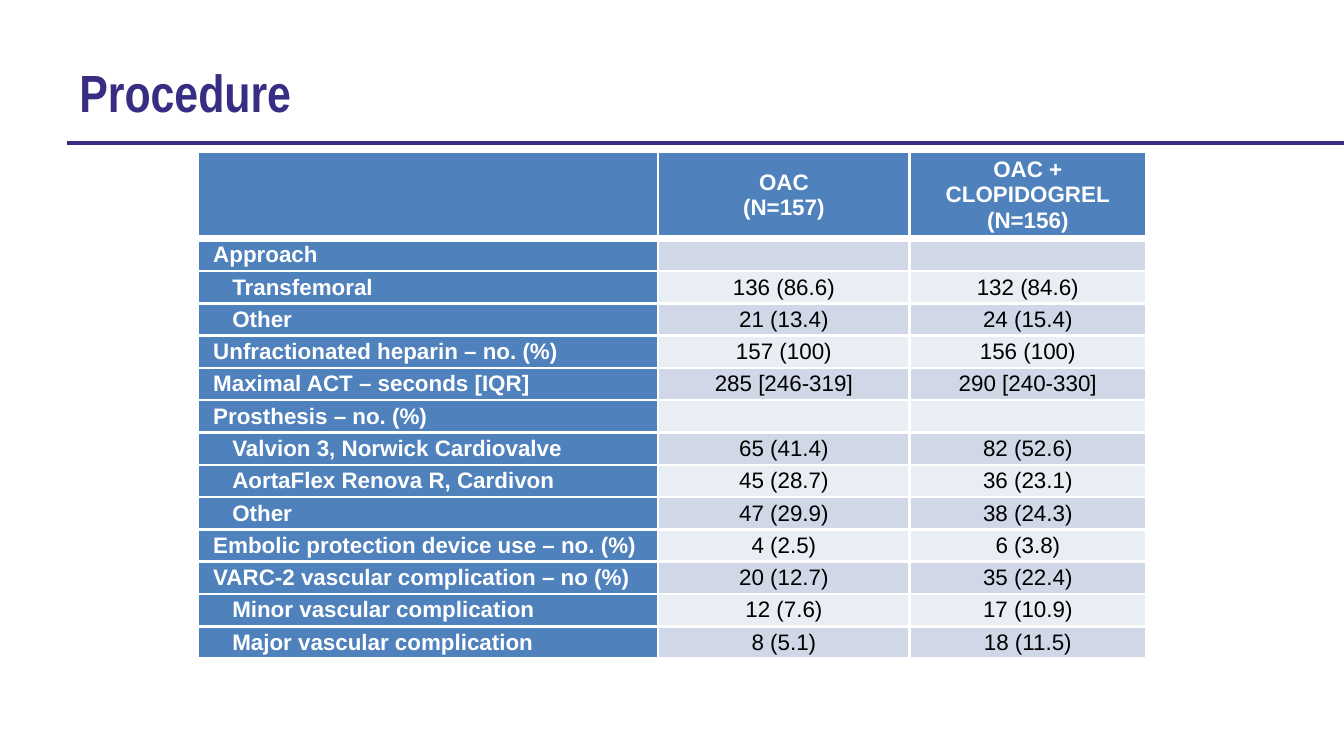
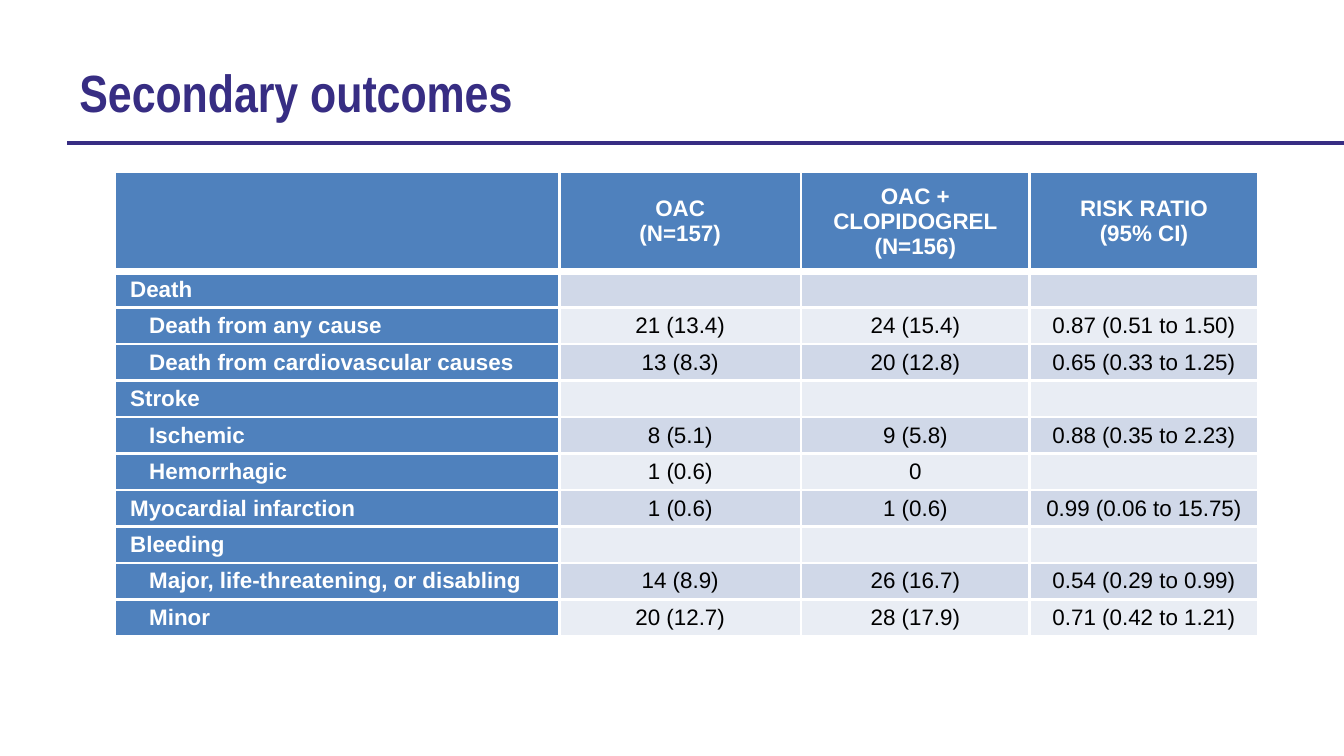
import pptx
import pptx.dml.color
import pptx.enum.shapes
import pptx.enum.text
import pptx.oxml.ns
import pptx.util
from itertools import zip_longest
from lxml import etree

Cm = pptx.util.Cm
Pt = pptx.util.Pt
qn = pptx.oxml.ns.qn
MIDDLE = pptx.enum.text.MSO_ANCHOR.MIDDLE
ALIGN = pptx.enum.text.PP_ALIGN

COLORS = {
    "title": "372D83",
    "header": "4F81BD",
    "dark_band": "D0D8E8",
    "light_band": "E9EDF4",
    "white": "FFFFFF",
    "black": "000000",
}
LABEL_INDENTS = (0.3, 0.66)
OAC = "OAC\v(N=157)"
OAC_CLOPIDOGREL = "OAC +\vCLOPIDOGREL\v(N=156)"

PROCEDURE_ROWS = [
    (0, "Approach"),
    (1, "Transfemoral", "136 (86.6)", "132 (84.6)"),
    (1, "Other", "21 (13.4)", "24 (15.4)"),
    (0, "Unfractionated heparin – no. (%)", "157 (100)", "156 (100)"),
    (0, "Maximal ACT – seconds [IQR]", "285 [246-319]", "290 [240-330]"),
    (0, "Prosthesis – no. (%)"),
    (1, "Valvion 3, Norwick Cardiovalve", "65 (41.4)", "82 (52.6)"),
    (1, "AortaFlex Renova R, Cardivon", "45 (28.7)", "36 (23.1)"),
    (1, "Other", "47 (29.9)", "38 (24.3)"),
    (0, "Embolic protection device use – no. (%)", "4 (2.5)", "6 (3.8)"),
    (0, "VARC-2 vascular complication – no (%)", "20 (12.7)", "35 (22.4)"),
    (1, "Minor vascular complication", "12 (7.6)", "17 (10.9)"),
    (1, "Major vascular complication", "8 (5.1)", "18 (11.5)"),
]

OUTCOME_ROWS = [
    (0, "Death"),
    (1, "Death from any cause", "21 (13.4)", "24 (15.4)", "0.87 (0.51 to 1.50)"),
    (1, "Death from cardiovascular causes", "13 (8.3)", "20 (12.8)", "0.65 (0.33 to 1.25)"),
    (0, "Stroke"),
    (1, "Ischemic", "8 (5.1)", "9 (5.8)", "0.88 (0.35 to 2.23)"),
    (1, "Hemorrhagic", "1 (0.6)", "0"),
    (0, "Myocardial infarction", "1 (0.6)", "1 (0.6)", "0.99 (0.06 to 15.75)"),
    (0, "Bleeding"),
    (1, "Major, life-threatening, or disabling", "14 (8.9)", "26 (16.7)", "0.54 (0.29 to 0.99)"),
    (1, "Minor", "20 (12.7)", "28 (17.9)", "0.71 (0.42 to 1.21)"),
]


def rgb(name):
    return pptx.dml.color.RGBColor.from_string(COLORS[name])


class TrialDeck:
    def __init__(self):
        self.deck = pptx.Presentation()
        self.deck.slide_width = Cm(25.4)
        self.deck.slide_height = Cm(14.28)
        self.page = None

    def add_page(self, title, title_width):
        self.page = self.deck.slides.add_slide(self.deck.slide_layouts[5])
        self.add_rule()
        self.add_title(title, title_width)

    def style(self, paragraph, font_name, size, color, bold):
        font = paragraph.font
        font.name = font_name
        font.size = Pt(size)
        font.bold = bold
        font.color.rgb = rgb(color)

    def add_rule(self):
        rule = self.page.shapes.add_connector(
            pptx.enum.shapes.MSO_CONNECTOR.STRAIGHT,
            Cm(1.27), Cm(2.7), self.deck.slide_width, Cm(2.7))
        rule.line.color.rgb = rgb("title")
        rule.line.width = Pt(2)
        etree.SubElement(rule._element.spPr, qn("a:effectLst"))

    def add_title(self, text, width):
        box = self.page.shapes.title
        box.left, box.top, box.width, box.height = Cm(1.5), Cm(1.1), Cm(width), Cm(1.25)
        frame = box.text_frame
        frame.margin_left = frame.margin_right = frame.margin_top = frame.margin_bottom = 0
        frame.word_wrap = False
        frame.auto_size = pptx.enum.text.MSO_AUTO_SIZE.SHAPE_TO_FIT_TEXT
        frame.vertical_anchor = MIDDLE
        frame.text = text
        paragraph = frame.paragraphs[0]
        paragraph.alignment = ALIGN.LEFT
        self.style(paragraph, "Arial Narrow", 28, "title", True)

    def add_table(self, left, top, widths, header_height, row_height, headings, rows):
        heights = [header_height] + [row_height] * len(rows)
        table = self.page.shapes.add_table(
            len(heights), len(widths), Cm(left), Cm(top),
            Cm(sum(widths)), Cm(sum(heights))).table
        table.horz_banding = False
        for column, width in zip(table.columns, widths):
            column.width = Cm(width)
        for row, height in zip(table.rows, heights):
            row.height = Cm(height)
        for row_index, (level, *texts) in enumerate([(0, "", *headings)] + rows):
            band = "dark_band" if row_index % 2 else "light_band"
            cells = table.rows[row_index].cells
            for index, (cell, text) in enumerate(zip_longest(cells, texts, fillvalue="")):
                heading = row_index == 0 or index == 0
                self.set_borders(cell, row_index)
                self.fill_cell(cell, text, heading, "header" if heading else band)
                if index == 0:
                    cell.margin_left = Cm(LABEL_INDENTS[level])
                    cell.text_frame.paragraphs[0].alignment = ALIGN.LEFT

    def fill_cell(self, cell, text, heading, fill):
        cell.fill.solid()
        cell.fill.fore_color.rgb = rgb(fill)
        cell.margin_left = cell.margin_right = cell.margin_top = cell.margin_bottom = 0
        cell.vertical_anchor = MIDDLE
        cell.text_frame.text = text
        paragraph = cell.text_frame.paragraphs[0]
        paragraph.alignment = ALIGN.CENTER
        self.style(paragraph, "Arial", 12, "white" if heading else "black", heading)
        if not text:
            paragraph._p.get_or_add_endParaRPr().set("sz", "1200")

    def set_borders(self, cell, row_index):
        thick_side = {0: "lnB", 1: "lnT"}.get(row_index)
        properties = cell._tc.get_or_add_tcPr()
        for side in ("lnL", "lnR", "lnT", "lnB"):
            width = Pt(4.25 if side == thick_side else 1.5)
            line = etree.SubElement(properties, qn("a:" + side), w=str(width))
            fill = etree.SubElement(line, qn("a:solidFill"))
            etree.SubElement(fill, qn("a:srgbClr"), val=COLORS["white"])


def main():
    trial = TrialDeck()
    trial.add_page("Procedure", 4.06)
    trial.add_table(3.73, 2.86, (8.71, 4.75, 4.47), 1.65, 0.61,
                    (OAC, OAC_CLOPIDOGREL), PROCEDURE_ROWS)
    trial.add_page("Secondary outcomes", 8.26)
    trial.add_table(2.16, 3.24, (8.41, 4.57, 4.32, 4.32), 1.88, 0.69,
                    (OAC, OAC_CLOPIDOGREL, "RISK RATIO\v(95% CI)"), OUTCOME_ROWS)
    trial.deck.save("out.pptx")


if __name__ == "__main__":
    main()
